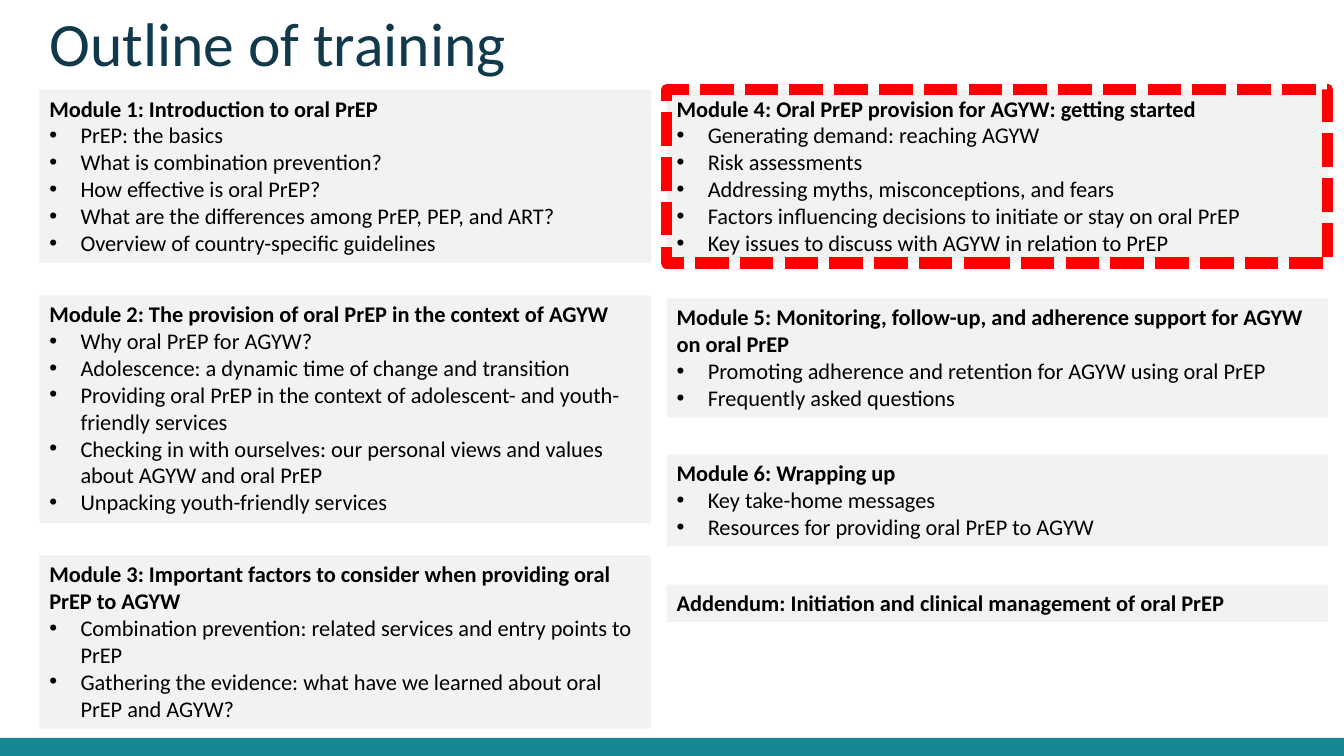
import pptx
import pptx.dml.color
import pptx.enum.dml
import pptx.enum.shapes
import pptx.enum.text
import pptx.oxml.ns
import pptx.util
from lxml import etree

RGB = pptx.dml.color.RGBColor
TEAL = RGB(0x17, 0x87, 0x93)
NAVY = RGB(0x10, 0x39, 0x4B)
GREY = RGB(0xF2, 0xF2, 0xF2)
BLACK = RGB(0, 0, 0)
RED = RGB(0xFF, 0, 0)

LEFT, RIGHT = 2.93, 49.6
WIDE = {LEFT: 45.53, RIGHT: 49.2}
PAD, LINE = 1.33, 3.6

MODULES = [
    (LEFT, 11.87, 6, "Module 1: Introduction to oral PrEP", [
        "PrEP: the basics",
        "What is combination prevention?",
        "How effective is oral PrEP?",
        "What are the differences among PrEP, PEP, and ART?",
        "Overview of country-specific guidelines"]),
    (LEFT, 39.07, 8, "Module 2: The provision of oral PrEP in the context of AGYW", [
        "Why oral PrEP for AGYW?",
        "Adolescence: a dynamic time of change and transition",
        "Providing oral PrEP in the context of adolescent- and youth- friendly services",
        "Checking in with ourselves: our personal views and values about AGYW and oral PrEP",
        "Unpacking youth-friendly services"]),
    (LEFT, 73.47, 6, "Module 3: Important factors to consider when providing oral PrEP to AGYW", [
        "Combination prevention: related services and entry points to PrEP",
        "Gathering the evidence: what have we learned about oral PrEP and AGYW?"]),
    (RIGHT, 11.87, 6, "Module 4: Oral PrEP provision for AGYW: getting started", [
        "Generating demand: reaching AGYW",
        "Risk assessments",
        "Addressing myths, misconceptions, and fears",
        "Factors influencing decisions to initiate or stay on oral PrEP",
        "Key issues to discuss with AGYW in relation to PrEP"]),
    (RIGHT, 39.47, 4, "Module 5: Monitoring, follow-up, and adherence support for AGYW on oral PrEP", [
        "Promoting adherence and retention for AGYW using oral PrEP",
        "Frequently asked questions"]),
    (RIGHT, 60.13, 3, "Module 6: Wrapping up", [
        "Key take-home messages",
        "Resources for providing oral PrEP to AGYW"]),
    (RIGHT, 77.33, 1, "Addendum: Initiation and clinical management of oral PrEP", []),
]


class Deck:
    font = "Calibri"
    indent = pptx.util.Inches(0.31)

    def __init__(self):
        self.prs = pptx.Presentation()
        self.prs.slide_width = pptx.util.Inches(13.33)
        self.prs.slide_height = pptx.util.Inches(7.5)
        self.slide = self.prs.slides.add_slide(self.prs.slide_layouts[6])

    def place(self, col, row, cols, rows):
        across, down = self.prs.slide_width / 100, self.prs.slide_height / 100
        return [int(size) for size in (col * across, row * down, cols * across, rows * down)]

    def style(self, para, size, color, bold=False):
        para.alignment = pptx.enum.text.PP_ALIGN.LEFT
        for run in para.runs:
            run.font.name = self.font
            run.font.size = pptx.util.Pt(size)
            run.font.bold = bold
            run.font.color.rgb = color

    def rect(self, spot, fill):
        shape = self.slide.shapes.add_shape(
            pptx.enum.shapes.MSO_SHAPE.RECTANGLE, *self.place(*spot))
        shape.shadow.inherit = False
        shape.fill.solid()
        shape.fill.fore_color.rgb = fill
        shape.line.fill.background()
        return shape

    def title(self, spot, text):
        frame = self.slide.shapes.add_textbox(*self.place(*spot)).text_frame
        frame.word_wrap = True
        frame.text = text
        para = frame.paragraphs[0]
        para.line_spacing = pptx.util.Pt(44.8)
        self.style(para, 44, NAVY)

    def bullet(self, para):
        props = para._p.get_or_add_pPr()
        props.set("marL", str(self.indent))
        props.set("indent", str(-self.indent))
        for tag, key, value in (("a:buFont", "typeface", "Arial"), ("a:buChar", "char", "•")):
            etree.SubElement(props, pptx.oxml.ns.qn(tag)).set(key, value)

    def module(self, spot, head, points):
        shape = self.rect(spot, GREY)
        frame = shape.text_frame
        frame.word_wrap = True
        frame.auto_size = pptx.enum.text.MSO_AUTO_SIZE.SHAPE_TO_FIT_TEXT
        frame.vertical_anchor = pptx.enum.text.MSO_ANCHOR.TOP
        frame.text = "\n".join([head] + points)
        for para in frame.paragraphs:
            self.style(para, 16, BLACK)
        frame.paragraphs[0].runs[0].font.bold = True
        for para in frame.paragraphs[1:]:
            self.bullet(para)
        return shape

    def mark(self, shape):
        shape.line.color.rgb = RED
        shape.line.width = pptx.util.Pt(8)
        shape.line.dash_style = pptx.enum.dml.MSO_LINE.SQUARE_DOT


def main():
    deck = Deck()
    deck.rect((0, 97.6, 100, 2.4), TEAL)
    deck.title((LEFT, 1.47, 90, 14.13), "Outline of training")
    for col, row, lines, head, points in MODULES:
        box = deck.module((col, row, WIDE[col], PAD + LINE * lines), head, points)
        if head.startswith("Module 4"):
            deck.mark(box)
    deck.prs.save("out.pptx")


if __name__ == "__main__":
    main()
